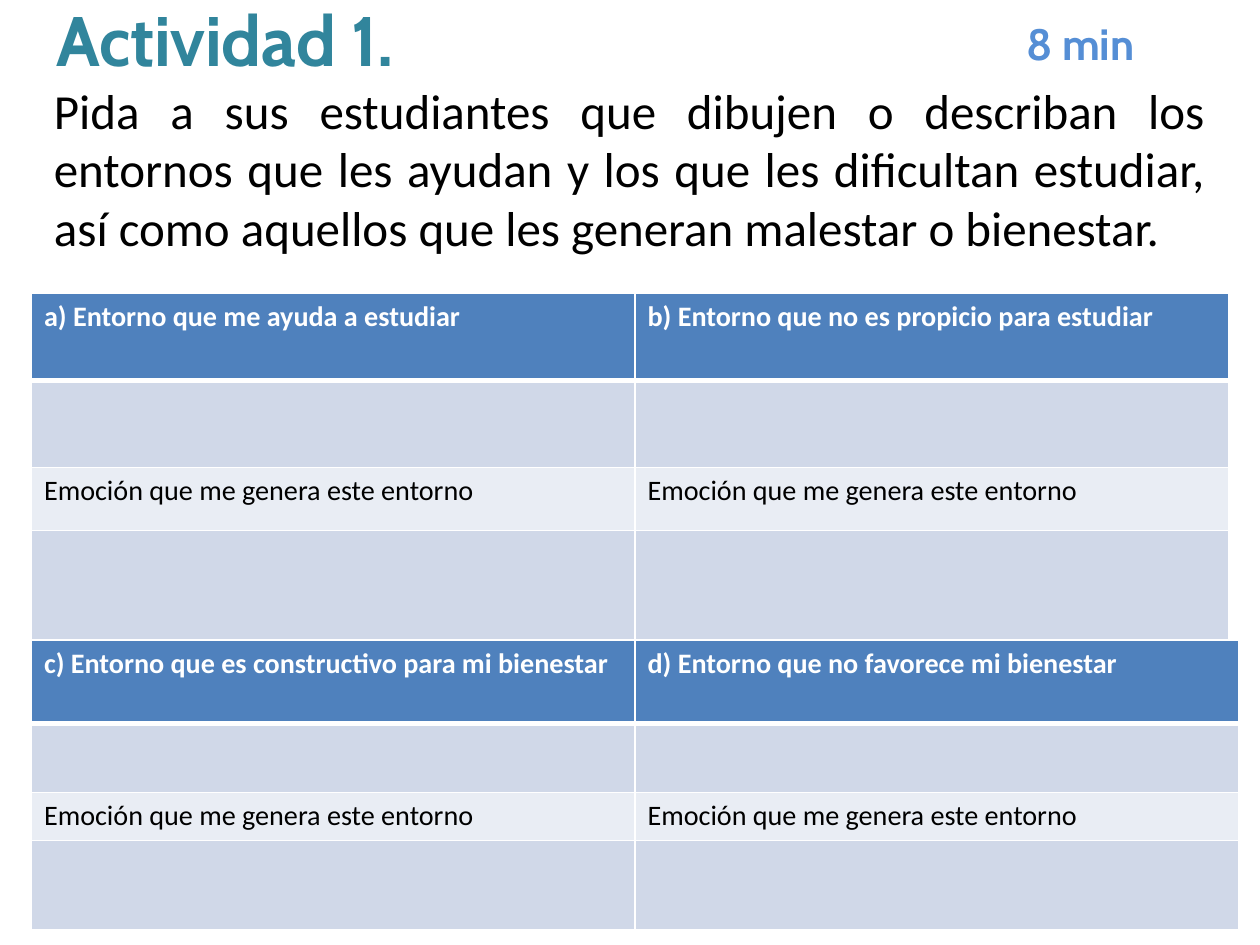
from lxml.etree import SubElement
from pptx import Presentation
from pptx.dml.color import RGBColor
from pptx.enum.text import MSO_AUTO_SIZE as AutoSize, PP_ALIGN as Align
from pptx.oxml.ns import qn
from pptx.util import Inches, Pt

COLUMNS, ROWS = 100, 75
WIDTH, HEIGHT = Inches(10), Inches(7.5)
WHITE, BLACK, TEAL, SKY = "FFFFFF", "000000", "31859C", "558ED5"
HEADER, BAND, PALE = "4F81BD", "D0D8E8", "E9EDF4"
EMOTION = "Emoción que me genera este entorno"
INSTRUCTION = (
    "Pida a sus estudiantes que dibujen o describan los entornos que les ayudan "
    "y los que les dificultan estudiar, así como aquellos que les generan "
    "malestar o bienestar."
)


def color(value):
    return RGBColor.from_string(value)


def across(columns):
    return round(WIDTH * columns / COLUMNS)


def down(rows):
    return round(HEIGHT * rows / ROWS)


def place(box):
    left, top, width, height = box
    return across(left), down(top), across(width), down(height)


def style(font, size, face, tone, bold=False):
    font.size, font.name, font.bold = Pt(size), face, bold
    font.color.rgb = color(tone)


def add_heading(paragraph, pieces, size, tone):
    paragraph.space_before = Pt(4.5)
    paragraph._p.get_or_add_pPr().set("marL", str(Inches(0.02)))
    for words, spacing in pieces:
        run = paragraph.add_run()
        run.text = words
        style(run.font, size, "Cabin", tone, True)
        run.font._element.set("spc", str(spacing))


def add_text_frame(slide, box, wrap):
    frame = slide.shapes.add_textbox(*place(box)).text_frame
    frame.word_wrap = wrap
    frame.auto_size = AutoSize.NONE
    return frame


def add_activity(slide, box):
    frame = add_text_frame(slide, box, True)
    add_heading(frame.paragraphs[0], [("Actividad ", -10), ("1.", 0)], 40, TEAL)
    instruction = frame.add_paragraph()
    instruction.text = INSTRUCTION
    instruction.alignment = Align.JUSTIFY
    style(instruction.runs[0].font, 28, "Calibri", BLACK)


def add_duration(slide, box):
    frame = add_text_frame(slide, box, False)
    add_heading(frame.paragraphs[0], [("8 min", -10)], 25, SKY)


def add_borders(cell, bottom):
    properties = cell._tc.get_or_add_tcPr()
    for position, side in enumerate(("lnL", "lnR", "lnT", "lnB")):
        weight = bottom if side == "lnB" else 1
        line = SubElement(properties, qn(f"a:{side}"), w=str(Pt(weight)))
        fill = SubElement(line, qn("a:solidFill"))
        SubElement(fill, qn("a:srgbClr"), val=WHITE)
        properties.remove(line)
        properties.insert(position, line)


def add_environments(slide, box, titles, widths, heights):
    table = slide.shapes.add_table(len(heights), len(widths), *place(box)).table
    for column, width in zip(table.columns, widths):
        column.width = across(width)
    contents = [titles, ("", ""), (EMOTION, EMOTION), ("", "")]
    fills = [HEADER, BAND, PALE, BAND]
    for index, (row, height) in enumerate(zip(table.rows, heights)):
        row.height = down(height)
        is_header = index == 0
        for cell, words in zip(row.cells, contents[index]):
            cell.fill.solid()
            cell.fill.fore_color.rgb = color(fills[index])
            add_borders(cell, 3 if is_header else 1)
            if words:
                cell.text_frame.text = words
                font = cell.text_frame.paragraphs[0].runs[0].font
                style(font, 16.1, "Calibri", WHITE if is_header else BLACK, is_header)


def main():
    deck = Presentation()
    deck.slide_width, deck.slide_height = WIDTH, HEIGHT
    slide = deck.slides.add_slide(deck.slide_layouts[6])
    add_activity(slide, (3.3, -0.8, 93.3, 40.7))
    add_duration(slide, (80.3, 0.8, 11.3, 5.2))
    add_environments(
        slide,
        (2.5, 23.3, 95, 27.6),
        ("a) Entorno que me ayuda a estudiar", "b) Entorno que no es propicio para estudiar"),
        (47.9, 47.1),
        (6.9, 6.9, 5, 8.8),
    )
    add_environments(
        slide,
        (2.5, 50.8, 95.8, 23),
        ("c) Entorno que es constructivo para mi bienestar", "d) Entorno que no favorece mi bienestar"),
        (47.9, 47.9),
        (6.6, 5.5, 3.8, 7.1),
    )
    deck.save("out.pptx")


if __name__ == "__main__":
    main()
